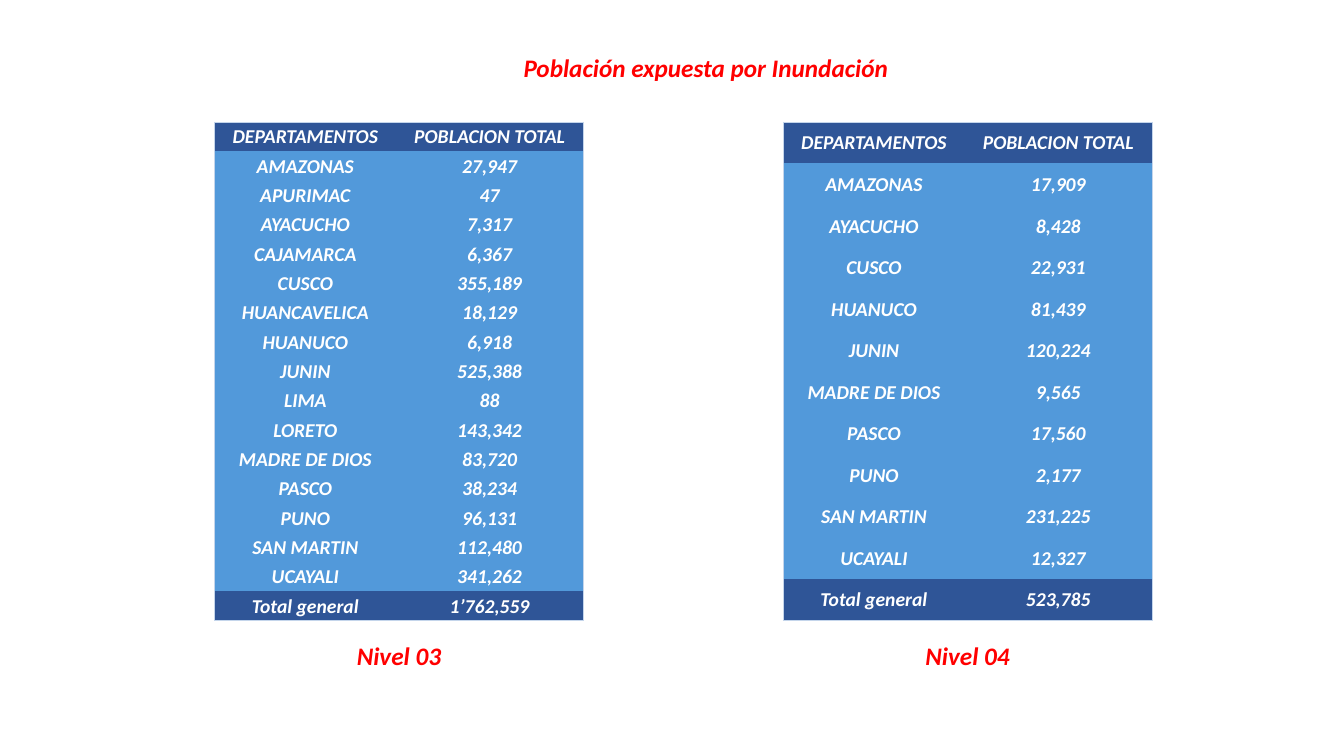
from lxml.etree import SubElement
from pptx import Presentation
from pptx.dml.color import RGBColor
from pptx.enum.text import MSO_ANCHOR as Anchor, MSO_AUTO_SIZE as AutoSize, PP_ALIGN as Align
from pptx.oxml.ns import qn
from pptx.util import Cm, Pt

LEVEL_3 = [
    ("AMAZONAS", "27,947"), ("APURIMAC", "47"), ("AYACUCHO", "7,317"),
    ("CAJAMARCA", "6,367"), ("CUSCO", "355,189"), ("HUANCAVELICA", "18,129"),
    ("HUANUCO", "6,918"), ("JUNIN", "525,388"), ("LIMA", "88"),
    ("LORETO", "143,342"), ("MADRE DE DIOS", "83,720"), ("PASCO", "38,234"),
    ("PUNO", "96,131"), ("SAN MARTIN", "112,480"), ("UCAYALI", "341,262"),
    ("Total general", "1’762,559"),
]
LEVEL_4 = [
    ("AMAZONAS", "17,909"), ("AYACUCHO", "8,428"), ("CUSCO", "22,931"),
    ("HUANUCO", "81,439"), ("JUNIN", "120,224"), ("MADRE DE DIOS", "9,565"),
    ("PASCO", "17,560"), ("PUNO", "2,177"), ("SAN MARTIN", "231,225"),
    ("UCAYALI", "12,327"), ("Total general", "523,785"),
]
HEADINGS = ("DEPARTAMENTOS", "POBLACION TOTAL")


def color(hex_code):
    return RGBColor.from_string(hex_code)


class FloodSlide:
    """Holds the slide and the style shared by its headings and tables."""

    font = "Calibri"
    red, white, edge = "FF0000", "FFFFFF", "C4D5EB"
    band, body = "2F5597", "5299DA"
    column_widths = (4.57, 4.72)
    table_top, table_height = 3.07, 12.57
    plain_style = "{2D5ABB26-0587-4C30-8999-92F81FD0307C}"

    def __init__(self, slide):
        self.slide = slide

    def label(self, frame, text, size, hex_code):
        paragraph = frame.paragraphs[0]
        paragraph.text = text
        paragraph.alignment = Align.CENTER
        font = paragraph.font
        font.name, font.size = self.font, Pt(size)
        font.bold = font.italic = True
        font.color.rgb = color(hex_code)

    def heading(self, text, left, top, width, wrap=True):
        box = self.slide.shapes.add_textbox(Cm(left), Cm(top), Cm(width), Cm(1.02))
        box.text_frame.word_wrap = wrap
        box.text_frame.auto_size = AutoSize.SHAPE_TO_FIT_TEXT
        self.label(box.text_frame, text, 18, self.red)

    def border(self, cell, side):
        line = SubElement(cell._tc.get_or_add_tcPr(), qn(f"a:ln{side}"), w=str(Pt(0.5)))
        fill = SubElement(line, qn("a:solidFill"))
        SubElement(fill, qn("a:srgbClr"), val=self.edge)

    def cell(self, cell, text, sides, fill):
        cell.margin_left = cell.margin_right = cell.margin_top = Cm(0.03)
        cell.margin_bottom = Cm(0)
        cell.vertical_anchor = Anchor.MIDDLE
        self.label(cell.text_frame, text, 14, self.white)
        for side in sides:
            self.border(cell, side)
        cell.fill.solid()
        cell.fill.fore_color.rgb = color(fill)

    def population_table(self, records, left):
        rows = [HEADINGS, *records]
        last = len(rows) - 1
        table = self.slide.shapes.add_table(
            len(rows), 2, Cm(left), Cm(self.table_top),
            Cm(sum(self.column_widths)), Cm(self.table_height)).table
        table.first_row = table.horz_banding = False
        table._tbl.tblPr.find(qn("a:tableStyleId")).text = self.plain_style
        for column, width in zip(table.columns, self.column_widths):
            column.width = Cm(width)
        for r, record in enumerate(rows):
            table.rows[r].height = Cm(self.table_height / len(rows))
            ends = "T" if r == 0 else "B" if r == last else ""
            for c, text in enumerate(record):
                self.cell(table.cell(r, c), text, "LR"[c] + ends,
                          self.band if ends else self.body)


def main():
    deck = Presentation()
    deck.slide_width, deck.slide_height = Cm(33.87), Cm(19.05)
    flood = FloodSlide(deck.slides.add_slide(deck.slide_layouts[6]))
    flood.heading("Población expuesta por Inundación", 12.9, 1.19, 9.78, wrap=False)
    for level, records, left in (("Nivel 03", LEVEL_3, 5.41), ("Nivel 04", LEVEL_4, 19.74)):
        flood.heading(level, left + 3.25, 16, 2.79)
        flood.population_table(records, left)
    deck.save("out.pptx")


if __name__ == "__main__":
    main()
